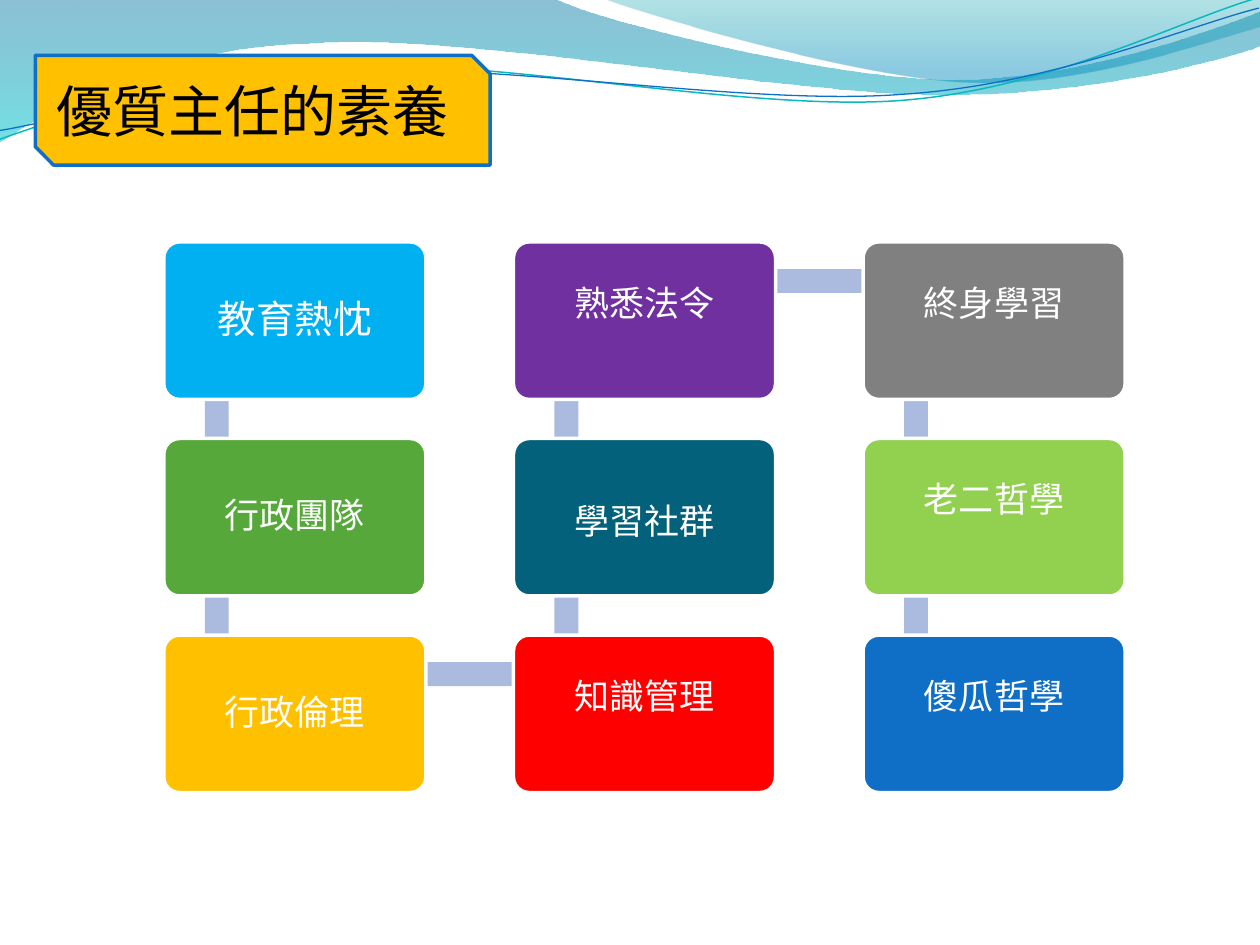
from math import atan2, degrees, hypot

from lxml.etree import SubElement
from pptx import Presentation
from pptx.dml.color import RGBColor
from pptx.enum.shapes import MSO_SHAPE
from pptx.enum.text import MSO_ANCHOR, PP_ALIGN
from pptx.oxml.ns import qn
from pptx.util import Inches, Pt

FONT = "Noto Sans CJK SC"
COLORS = {
    "white": "FFFFFF", "black": "000000", "bar": "ABBBDF",
    "sky": "00B0F0", "green": "55A839", "gold": "FFC000",
    "red": "FF0000", "teal": "04617B", "purple": "7030A0",
    "gray": "808080", "lime": "92D050", "blue": "0F6FC6",
    "wave_blue": "0074A1", "wave_cyan": "00C6CF",
    "crest_teal": "00A1A9", "crest_blue": "008BBF", "thread": "0AB8BF",
}

TITLE = "優質主任的素養"

# Text, fill, size, extra top inset, extra bottom inset; the path snakes
# down the first column, up the second and down the third.
QUALITIES = [
    ("教育熱忱", "sky", 22, 0, 0),
    ("行政團隊", "green", 20, 0, 0),
    ("行政倫理", "gold", 20, 0, 0),
    ("知識管理", "red", 20, 0, 0.25),
    ("學習社群", "teal", 20, 0.1, 0),
    ("熟悉法令", "purple", 20, 0, 0.25),
    ("終身學習", "gray", 20, 0, 0.25),
    ("老二哲學", "lime", 20, 0, 0.25),
    ("傻瓜哲學", "blue", 20, 0, 0.25),
]

# Outlines: a start point, then lines (x, y) and Bezier curves (6 numbers).
# Gradient stops: position, colour, opacity in percent.
WAVES = [
    ([(0, 0), (4.4, -0.01), (4.76, 0.17, 6.64, 0.63, 7.58, 0.63),
      (8.53, 0.63, 9.58, 0.26, 10, 0.09), (10.01, 0.36),
      (9.83, 0.44, 8.7, 0.76, 7.46, 0.75), (6.22, 0.75, 3.82, 0.28, 2.57, 0.34),
      (1.29, 0.36, 0.46, 0.83, -0.01, 1.13)],
     [(0, "wave_blue", 45), (1, "wave_cyan", 55)]),
    ([(4.79, -0.01), (5.09, 0.11, 6.82, 0.62, 7.69, 0.65),
      (8.56, 0.69, 9.61, 0.32, 10, 0.21), (10, 0)],
     [(0, "crest_teal", 30), (0.8, "crest_blue", 45)]),
]
THREADS = [
    ([(-0.02, 0.87), (0.47, 0.72, 1.58, 0.41, 2.78, 0.42),
      (3.96, 0.42, 5.91, 0.93, 7.12, 0.9), (8.32, 0.87, 9.4, 0.36, 10, 0.22)],
     "thread", 0.85),
    ([(-0.02, 0.8), (0.46, 0.75, 1.64, 0.45, 2.83, 0.46),
      (4.03, 0.46, 5.96, 0.89, 7.16, 0.85), (8.35, 0.83, 9.42, 0.42, 10.01, 0.3)],
     "blue", 0.75),
]
THREAD_TILT = 357.3

ROWS, COLUMNS = 3, 3
GRID_LEFT, GRID_TOP = 1.3, 1.92
LAST_LEFT, LAST_TOP = 6.85, 5.04
COLUMN_PITCH = (LAST_LEFT - GRID_LEFT) / (COLUMNS - 1)
ROW_PITCH = (LAST_TOP - GRID_TOP) / (ROWS - 1)
BOX_WIDTH, BOX_HEIGHT = 2.08, 1.25
JOINT_X, JOINT_Y = 0.42, 0.31
BAR, BAR_GAP = 0.19, 0.01

deck = Presentation()
deck.slide_width, deck.slide_height = Inches(10), Inches(7.5)
slide = deck.slides.add_slide(deck.slide_layouts[6])


def rgb(name):
    return RGBColor.from_string(COLORS[name])


def set_line(shape, color, width):
    if color:
        shape.line.color.rgb = rgb(color)
        shape.line.width = Pt(width)
    else:
        shape.line.fill.background()


def add_block(preset, left, top, width, height, fill, line=None, line_width=2):
    block = slide.shapes.add_shape(
        preset, Inches(left), Inches(top), Inches(width), Inches(height))
    block.shadow.inherit = False
    block.fill.solid()
    block.fill.fore_color.rgb = rgb(fill)
    set_line(block, line, line_width)
    return block


def write(shape, text, size, color, align=PP_ALIGN.CENTER, spacing=1.0,
          insets=(0.1, 0.05, 0.1, 0.05)):
    frame = shape.text_frame
    frame.word_wrap = True
    frame.vertical_anchor = MSO_ANCHOR.MIDDLE
    (frame.margin_left, frame.margin_top,
     frame.margin_right, frame.margin_bottom) = map(Inches, insets)
    paragraph = frame.paragraphs[0]
    paragraph.alignment = align
    paragraph.line_spacing = spacing
    run = paragraph.add_run()
    run.text = text
    run.font.size = Pt(size)
    run.font.name = FONT
    run.font.color.rgb = rgb(color)
    SubElement(run.font._element, qn("a:ea"), typeface=FONT)


def add_outline(outline, closed):
    """Draw the control points as a polygon, then merge triples into curves."""
    points = [(Inches(segment[i]), Inches(segment[i + 1]))
              for segment in outline for i in range(0, len(segment), 2)]
    builder = slide.shapes.build_freeform(*points[0])
    builder.add_line_segments(points[1:], close=closed)
    shape = builder.convert_to_shape()
    shape.shadow.inherit = False
    steps = iter(list(shape._element.iter(qn("a:lnTo"))))
    for segment in outline[1:]:
        step = next(steps)
        if len(segment) == 6:
            step.tag = qn("a:cubicBezTo")
            for control in (next(steps), next(steps)):
                step.append(control[0])
                control.getparent().remove(control)
    return shape


def corner(index):
    """Left and top of a box in the snaking order."""
    column, step = divmod(index, ROWS)
    row = ROWS - 1 - step if column % 2 else step
    return GRID_LEFT + column * COLUMN_PITCH, GRID_TOP + row * ROW_PITCH


for outline, stops in WAVES:
    wave = add_outline(outline, closed=True)
    set_line(wave, None, 0)
    wave.fill.gradient()
    wave.fill.gradient_angle = 270
    for stop, (position, color, opacity) in zip(wave.fill.gradient_stops, stops):
        stop.position = position
        stop.color.rgb = rgb(color)
    for node, (_, _, opacity) in zip(wave._element.iter(qn("a:srgbClr")), stops):
        SubElement(node, qn("a:alpha"), val=str(opacity * 1000))

for outline, color, width in THREADS:
    thread = add_outline(outline, closed=False)
    thread.rotation = THREAD_TILT
    thread.fill.background()
    set_line(thread, color, width)

corners = [corner(index) for index in range(len(QUALITIES))]
for (x1, y1), (x2, y2) in zip(corners, corners[1:]):
    length = hypot(x2 - x1, y2 - y1) - BAR_GAP
    bar = add_block(MSO_SHAPE.RECTANGLE,
                    (x1 + x2 - length) / 2 + JOINT_X,
                    (y1 + y2 - BAR) / 2 + JOINT_Y, length, BAR, "bar")
    bar.rotation = degrees(atan2(y2 - y1, x2 - x1)) % 360

for (left, top), (text, fill, size, extra_top, extra_bottom) in zip(corners, QUALITIES):
    box = add_block(MSO_SHAPE.ROUNDED_RECTANGLE, left, top,
                    BOX_WIDTH, BOX_HEIGHT, fill, line="white")
    box.adjustments[0] = 0.1
    write(box, text, size, "white", spacing=0.9,
          insets=(0.08, 0.08 + extra_top, 0.08, 0.08 + extra_bottom))

title = add_block(MSO_SHAPE.SNIP_2_DIAG_RECTANGLE, 0.28, 0.44, 3.61, 0.87,
                  "gold", line="blue")
write(title, TITLE, 32, "black", align=PP_ALIGN.LEFT)

deck.save("out.pptx")
